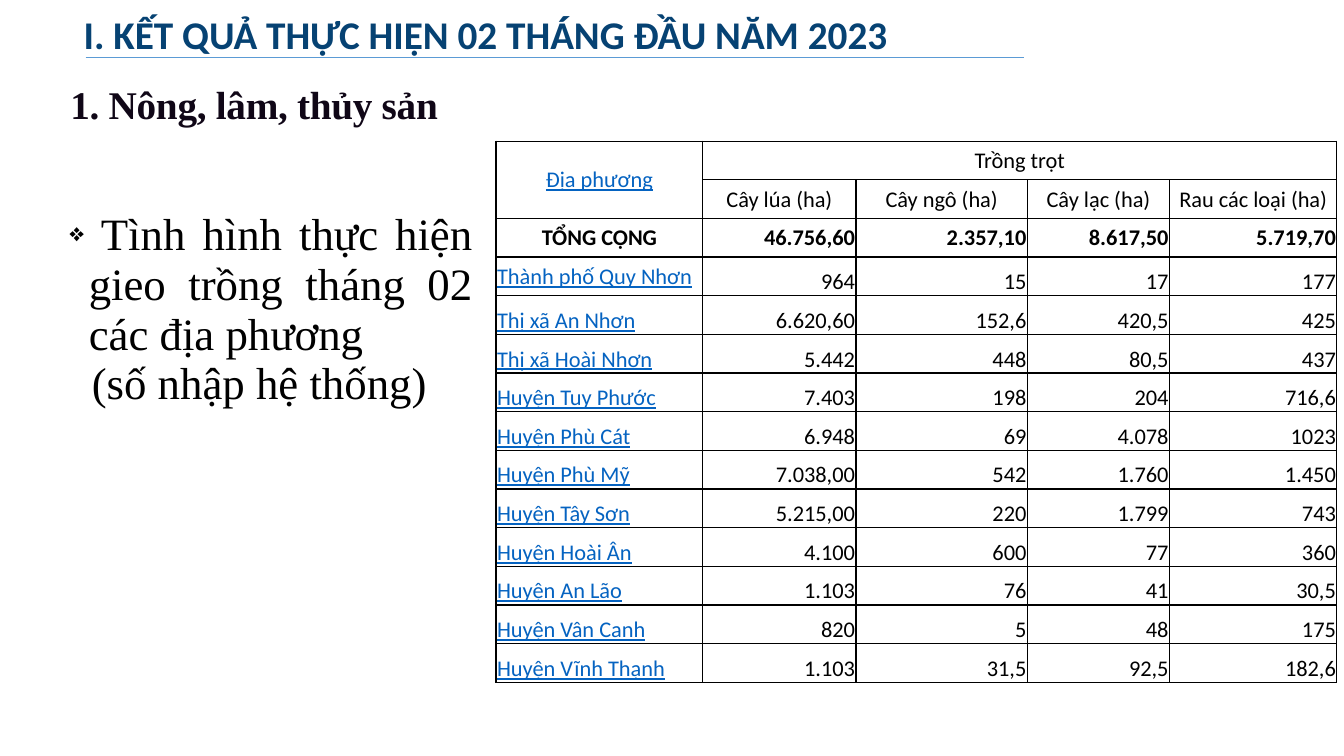
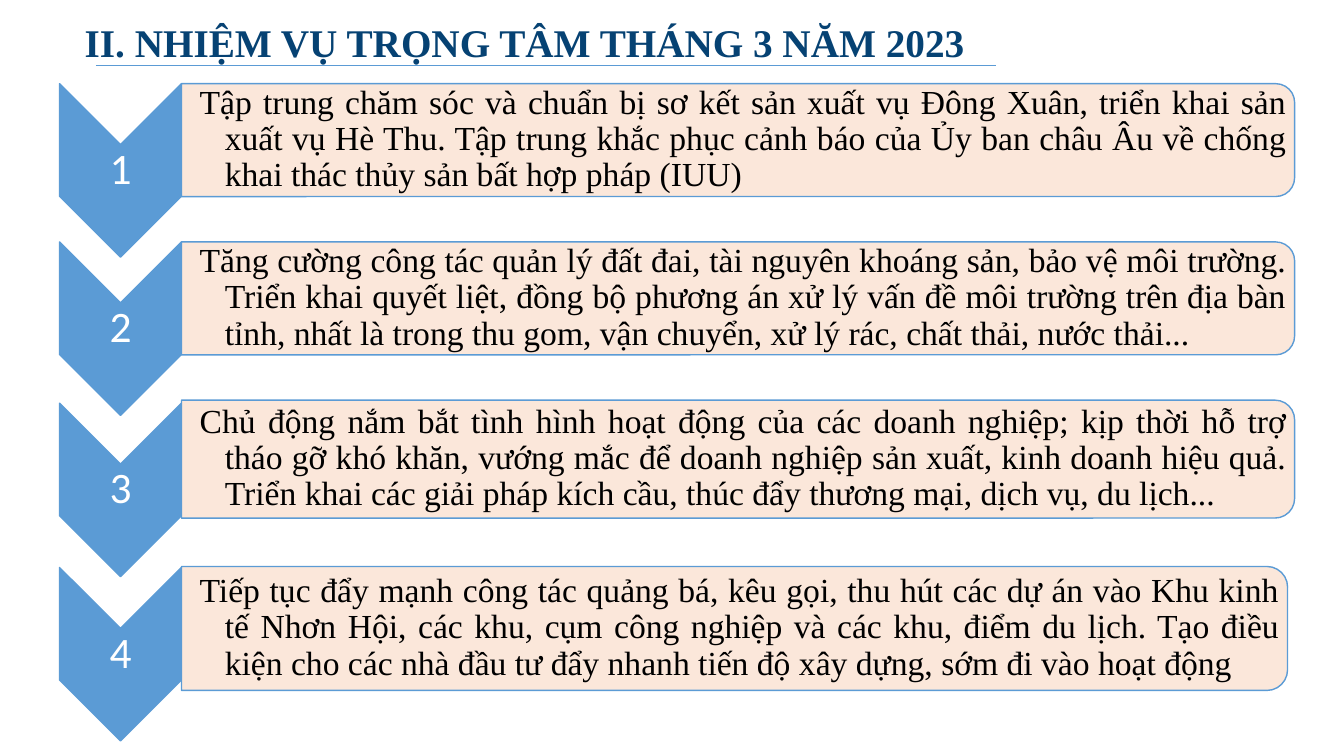
from lxml import etree
from pptx import Presentation
from pptx.dml.color import RGBColor
from pptx.enum.shapes import MSO_CONNECTOR, MSO_SHAPE
from pptx.enum.text import MSO_ANCHOR, MSO_AUTO_SIZE, PP_ALIGN
from pptx.oxml.ns import qn
from pptx.util import Pt

PX = 9144  # 100 px to the inch
HUES = {"navy": "064273", "blue": "5B9BD5", "peach": "FBE5D6", "link": "0563C1",
        "ink": "100717", "black": "000000", "white": "FFFFFF"}
SANS, SERIF = "Calibri", "Times New Roman"
TOP, MID, LOW = MSO_ANCHOR.TOP, MSO_ANCHOR.MIDDLE, MSO_ANCHOR.BOTTOM
LEFT, RIGHT, CENTER, FULL = PP_ALIGN.LEFT, PP_ALIGN.RIGHT, PP_ALIGN.CENTER, PP_ALIGN.JUSTIFY

# Text formats
HEAD = {"size": Pt(28), "bold": True, "hue": "navy"}
TOPIC = {"name": SERIF, "size": Pt(28), "bold": True, "hue": "ink"}
NOTE = {"name": SERIF, "size": Pt(32), "hue": "black"}
SPACER = {**NOTE, "size": Pt(18)}
CELL = {"name": SANS, "size": Pt(16), "bold": False, "hue": "black"}
LINK = {**CELL, "hue": "link", "underline": True}
TOTAL = {**CELL, "bold": True}
DIGIT = {"name": SANS, "size": Pt(31), "hue": "white"}
TASK = {"name": SERIF, "size": Pt(24), "hue": "black"}

# Slide content
CROPS = ["Cây lúa (ha)", "Cây ngô (ha)", "Cây lạc (ha)", "Rau các loại (ha)"]
ROWS = [
    ["TỔNG CỘNG", "46.756,60", "2.357,10", "8.617,50", "5.719,70"],
    ["Thành phố Quy Nhơn", "964", "15", "17", "177"],
    ["Thị xã An Nhơn", "6.620,60", "152,6", "420,5", "425"],
    ["Thị xã Hoài Nhơn", "5.442", "448", "80,5", "437"],
    ["Huyện Tuy Phước", "7.403", "198", "204", "716,6"],
    ["Huyện Phù Cát", "6.948", "69", "4.078", "1023"],
    ["Huyện Phù Mỹ", "7.038,00", "542", "1.760", "1.450"],
    ["Huyện Tây Sơn", "5.215,00", "220", "1.799", "743"],
    ["Huyện Hoài Ân", "4.100", "600", "77", "360"],
    ["Huyện An Lão", "1.103", "76", "41", "30,5"],
    ["Huyện Vân Canh", "820", "5", "48", "175"],
    ["Huyện Vĩnh Thạnh", "1.103", "31,5", "92,5", "182,6"],
]
# Chevron top, bar top, bar width, bar height, text
TASKS = [
    (83, 83, 1104, 112, "Tập trung chăm sóc và chuẩn bị sơ kết sản xuất vụ Đông Xuân, triển khai "
     "sản xuất vụ Hè Thu. Tập trung khắc phục cảnh báo của Ủy ban châu Âu về chống khai thác "
     "thủy sản bất hợp pháp (IUU)"),
    (240, 240, 1104, 112, "Tăng cường công tác quản lý đất đai, tài nguyên khoáng sản, bảo vệ môi "
     "trường. Triển khai quyết liệt, đồng bộ phương án xử lý vấn đề môi trường trên địa bàn tỉnh, "
     "nhất là trong thu gom, vận chuyển, xử lý rác, chất thải, nước thải..."),
    (400, 397, 1104, 117, "Chủ động nắm bắt tình hình hoạt động của các doanh nghiệp; kịp thời hỗ "
     "trợ tháo gỡ khó khăn, vướng mắc để doanh nghiệp sản xuất, kinh doanh hiệu quả. "
     "Triển khai các giải pháp kích cầu, thúc đẩy thương mại, dịch vụ, du lịch..."),
    (563, 562, 1097, 123, "Tiếp tục đẩy mạnh công tác quảng bá, kêu gọi, thu hút các dự án vào Khu "
     "kinh tế Nhơn Hội, các khu, cụm công nghiệp và các khu, điểm du lịch. Tạo điều kiện cho "
     "các nhà đầu tư đẩy nhanh tiến độ xây dựng, sớm đi vào hoạt động"),
]


def px(*sizes):
    return [round(size * PX) for size in sizes]


def color(hue):
    return RGBColor.from_string(HUES[hue])


def assign(item, values):
    for name, value in values.items():
        setattr(item, name, value)


def write(para, text, form):
    run = para.add_run()
    run.text = text
    assign(run.font, {key: value for key, value in form.items() if key != "hue"})
    run.font.color.rgb = color(form["hue"])
    return run


def indent(para, left, first=0, mark=None):
    props = para._p.get_or_add_pPr()
    props.set("marL", str(left * PX))
    props.set("indent", str(first * PX))
    if mark:
        etree.SubElement(props, qn("a:buChar")).set("char", mark)
    else:
        etree.SubElement(props, qn("a:buNone"))


def label(shapes, box, text, form, align=LEFT, pads=None, **frame):
    area = shapes.add_textbox(*px(*box)).text_frame
    assign(area, {"word_wrap": True, **frame})
    if pads:
        names = ("margin_left", "margin_top", "margin_right", "margin_bottom")
        assign(area, dict(zip(names, px(*pads))))
    para = area.paragraphs[0]
    para.alignment = align
    return para, write(para, text, form)


def start(deck, text, font, box):
    """Add a slide with its title."""
    slide = deck.slides.add_slide(deck.slide_layouts[5])
    shape = slide.shapes.title
    assign(shape, dict(zip(("left", "top", "width", "height"), px(*box))))
    area = shape.text_frame
    assign(area, {"vertical_anchor": TOP, "word_wrap": True, "auto_size": MSO_AUTO_SIZE.NONE})
    area.paragraphs[0].alignment = LEFT
    write(area.paragraphs[0], text, {**HEAD, "name": font})
    return slide


def rule(slide, left, right, top):
    line = slide.shapes.add_connector(MSO_CONNECTOR.STRAIGHT, *px(left, top, right, top))
    line.line.color.rgb = color("blue")
    line.line.width = Pt(1)
    etree.SubElement(line._element.spPr, qn("a:effectLst"))


def turned(shapes, kind, left, top, width, height, hue):
    """Add a shape turned a quarter, given the box it covers on the slide."""
    shift = (width - height) / 2
    shape = shapes.add_shape(kind, *px(left + shift, top - shift, height, width))
    shape.rotation = 90
    shape.shadow.inherit = False
    shape.fill.solid()
    shape.fill.fore_color.rgb = color(hue)
    shape.line.color.rgb = color("blue")
    shape.line.width = Pt(1)
    return shape


def border(cell, hue=None):
    props = cell._tc.get_or_add_tcPr()
    for spot, side in enumerate(("a:lnL", "a:lnR", "a:lnT", "a:lnB")):
        edge = etree.Element(qn(side), w=str(Pt(1)))
        if hue:
            fill = etree.SubElement(edge, qn("a:solidFill"))
            etree.SubElement(fill, qn("a:srgbClr"), val=HUES[hue])
        else:
            etree.SubElement(edge, qn("a:noFill"))
        props.insert(spot, edge)


def plain_grid(slide, left, top, widths, height, count, hue=None):
    """Add a table of equal rows without a banded style."""
    box = px(left, top, sum(widths), height)
    grid = slide.shapes.add_table(count, len(widths), *box).table
    assign(grid, {"first_row": False, "horz_banding": False})
    for column, width in zip(grid.columns, widths):
        column.width = width * PX
    for row in grid.rows:
        row.height = height * PX // count
    for cell in grid.iter_cells():
        cell.fill.background()
        border(cell, hue)
    return grid


def fill_cell(cell, text, form, align, anchor):
    assign(cell, {"margin_left": PX, "margin_right": PX, "margin_top": PX,
                  "margin_bottom": 0, "vertical_anchor": anchor})
    para = cell.text_frame.paragraphs[0]
    para.alignment = align
    write(para, text, form)


def crop_table(slide):
    widths = (205, 152, 170, 141, 166)
    grid = plain_grid(slide, 492, 140, widths, 537, len(ROWS) + 2, "black")
    # Merged headings
    grid.cell(0, 0).merge(grid.cell(1, 0))
    grid.cell(0, 1).merge(grid.cell(0, 4))
    fill_cell(grid.cell(0, 0), "Địa phương", LINK, CENTER, MID)
    fill_cell(grid.cell(0, 1), "Trồng trọt", CELL, CENTER, MID)
    for col, crop in enumerate(CROPS, 1):
        fill_cell(grid.cell(1, col), crop, CELL, CENTER, MID)
    # Total row, then one row per place
    for row, (place, *areas) in enumerate(ROWS):
        total = row == 0
        fill_cell(grid.cell(row + 2, 0), place, TOTAL if total else LINK,
                  CENTER if total else LEFT, MID if row < 2 else LOW)
        for col, area in enumerate(areas, 1):
            fill_cell(grid.cell(row + 2, col), area, TOTAL if total else CELL,
                      RIGHT, MID if total else LOW)


def note_table(slide):
    cell = plain_grid(slide, 59, 196, (420,), 223, 1).cell(0, 0)
    cell.vertical_anchor = MID
    area = cell.text_frame
    first, last = area.paragraphs[0], area.add_paragraph()
    indent(first, 19, -19, "❖")
    indent(last, 22)
    first.alignment = last.alignment = FULL
    last.space_after = Pt(12)
    write(first, " ", SPACER)
    write(first, "Tình hình thực hiện gieo trồng tháng 02 các địa phương", NOTE)
    write(last, "(số nhập hệ thống)", NOTE)


def task_step(shapes, number, peak, top, width, height, text):
    turned(shapes, MSO_SHAPE.CHEVRON, 59, peak, 121, 172, "blue")
    para, _ = label(shapes, (59, peak + 60, 121, 52), str(number), DIGIT, CENTER,
                    (2, 2, 2, 2), vertical_anchor=MID)
    para.line_spacing = 0.9
    bar = turned(shapes, MSO_SHAPE.ROUND_2_SAME_RECTANGLE, 180, top, width, height, "peach")
    tint = bar._element.spPr.find(qn("a:solidFill")).find(qn("a:srgbClr"))
    etree.SubElement(tint, qn("a:alpha"), val="90000")
    para, _ = label(shapes, (180, top + 5, width - 6, height - 11), text, TASK, FULL,
                    (18, 2, 2, 2), vertical_anchor=MID)
    indent(para, 25, -25)
    para.line_spacing = 0.9


def main():
    deck = Presentation()
    deck.slide_width, deck.slide_height = px(1333, 750)

    # Results by place
    slide = start(deck, "I. KẾT QUẢ THỰC HIỆN 02 THÁNG ĐẦU NĂM 2023", SANS, (73, 5, 1230, 62))
    rule(slide, 85, 1016, 57)
    _, run = label(slide.shapes, (60, 75, 400, 57), "1. Nông, lâm, thủy sản", TOPIC)
    run._r.get_or_add_rPr().set("spc", "-20")
    note_table(slide)
    crop_table(slide)

    # Tasks for the month
    slide = start(deck, "II. NHIỆM VỤ TRỌNG TÂM THÁNG 3 NĂM 2023", SERIF, (74, 13, 1184, 62))
    group = slide.shapes.add_group_shape()
    for number, task in enumerate(TASKS, 1):
        task_step(group.shapes, number, *task)
    rule(slide, 95, 988, 65)

    deck.save("out.pptx")


if __name__ == "__main__":
    main()
